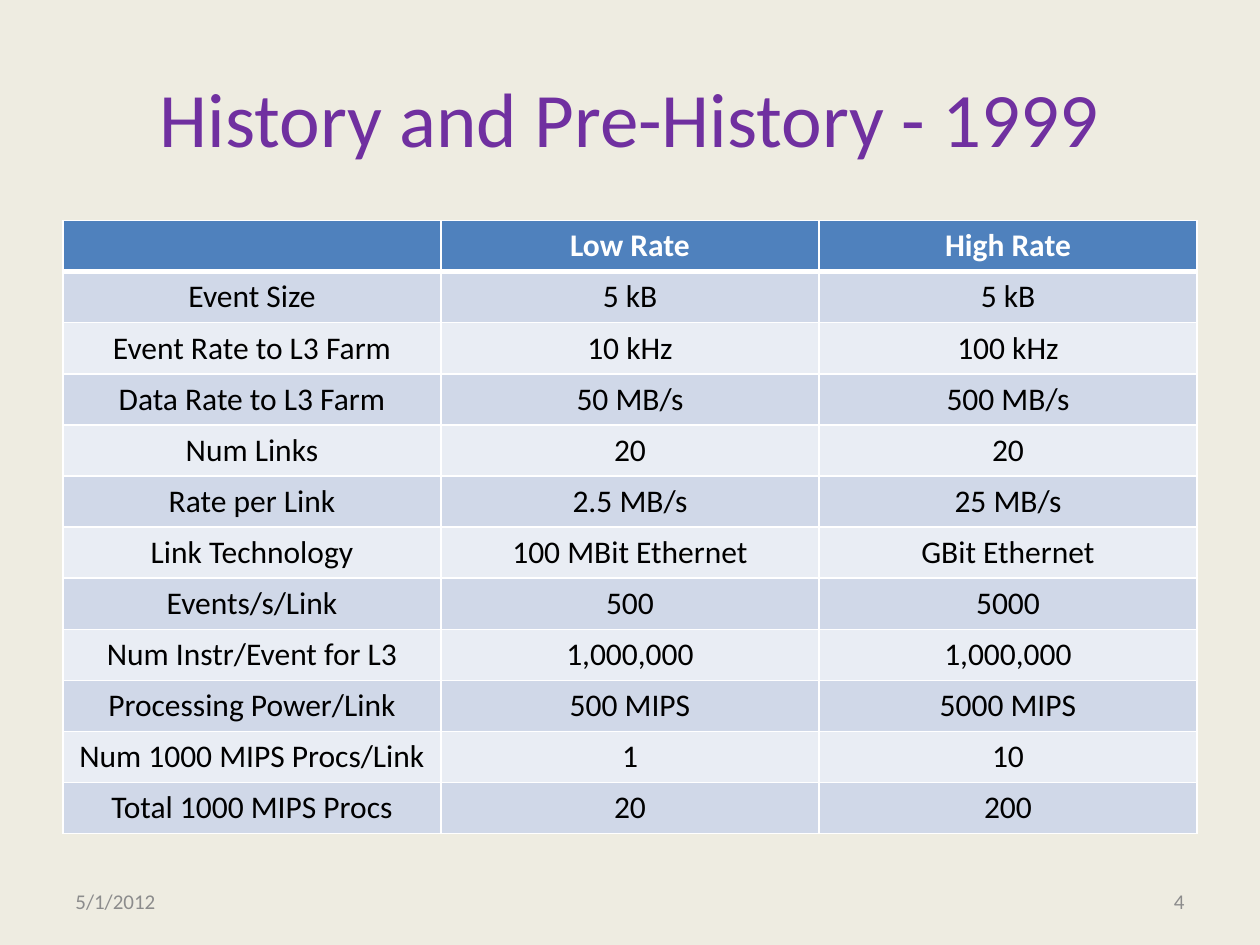
import pptx
import pptx.util
import pptx.dml.color
import pptx.enum.text
import pptx.oxml.ns
import lxml.etree

Pt = pptx.util.Pt
RGB = pptx.dml.color.RGBColor.from_string
Align = pptx.enum.text.PP_ALIGN
Anchor = pptx.enum.text.MSO_ANCHOR
qn = pptx.oxml.ns.qn

hues = {"back": "EEECE1", "title": "7030A0", "head": "4F81BD", "odd": "D0D8E8",
        "even": "E9EDF4", "white": "FFFFFF", "black": "000000", "gray": "8C8C8C"}


def write(frame, text, size, hue, align, bold=False):
    frame.text = text
    para = frame.paragraphs[0]
    para.alignment = align
    font = para.font if not text else para.runs[0].font
    for key, value in {"name": "Calibri", "size": Pt(size), "bold": bold}.items():
        setattr(font, key, value)
    font.color.rgb = RGB(hues[hue])


def edge(cell, side, width):
    line = lxml.etree.SubElement(cell._tc.get_or_add_tcPr(), qn("a:ln" + side), w=str(Pt(width)))
    fill = lxml.etree.SubElement(line, qn("a:solidFill"))
    lxml.etree.SubElement(fill, qn("a:srgbClr"), val=hues["white"])


# Slide and background
deck = pptx.Presentation()
deck.slide_width, deck.slide_height = Pt(720), Pt(540)
slide = deck.slides.add_slide(deck.slide_layouts[5])
slide.background.fill.solid()
slide.background.fill.fore_color.rgb = RGB(hues["back"])

# Title
title = slide.shapes.title
place = {"left": 36, "top": 21.6, "width": 648, "height": 90}
for key, value in place.items():
    setattr(title, key, Pt(value))
title.text_frame.vertical_anchor = Anchor.MIDDLE
write(title.text_frame, "History and Pre-History - 1999", 44, "title", Align.CENTER)

# Table of rates
rows = [
    ("", "Low Rate", "High Rate"),
    ("Event Size", "5 kB", "5 kB"),
    ("Event Rate to L3 Farm", "10 kHz", "100 kHz"),
    ("Data Rate to L3 Farm", "50 MB/s", "500 MB/s"),
    ("Num Links", "20", "20"),
    ("Rate per Link", "2.5 MB/s", "25 MB/s"),
    ("Link Technology", "100 MBit Ethernet", "GBit Ethernet"),
    ("Events/s/Link", "500", "5000"),
    ("Num Instr/Event for L3", "1,000,000", "1,000,000"),
    ("Processing Power/Link", "500 MIPS", "5000 MIPS"),
    ("Num 1000 MIPS Procs/Link", "1", "10"),
    ("Total 1000 MIPS Procs", "20", "200"),
]
high = 29.2
table = slide.shapes.add_table(len(rows), 3, Pt(36), Pt(126), Pt(648), Pt(high * len(rows))).table
for r, row in enumerate(rows):
    table.rows[r].height = Pt(high)
    head = r == 0
    for c, text in enumerate(row):
        cell = table.cell(r, c)
        # The rule under the header is thicker than the grid
        for side, width in {"L": 1, "R": 1, "T": 3 if r == 1 else 1, "B": 3 if head else 1}.items():
            edge(cell, side, width)
        cell.fill.solid()
        cell.fill.fore_color.rgb = RGB(hues["head" if head else "odd" if r % 2 else "even"])
        write(cell.text_frame, text, 18, "white" if head else "black", Align.CENTER, head)

# Date and page number
for text, left, align in [("5/1/2012", 36, Align.LEFT), ("4", 516, Align.RIGHT)]:
    frame = slide.shapes.add_textbox(Pt(left), Pt(500.5), Pt(168), Pt(28.75)).text_frame
    frame.word_wrap = True
    frame.vertical_anchor = Anchor.MIDDLE
    write(frame, text, 12, "gray", align)

deck.save("out.pptx")
